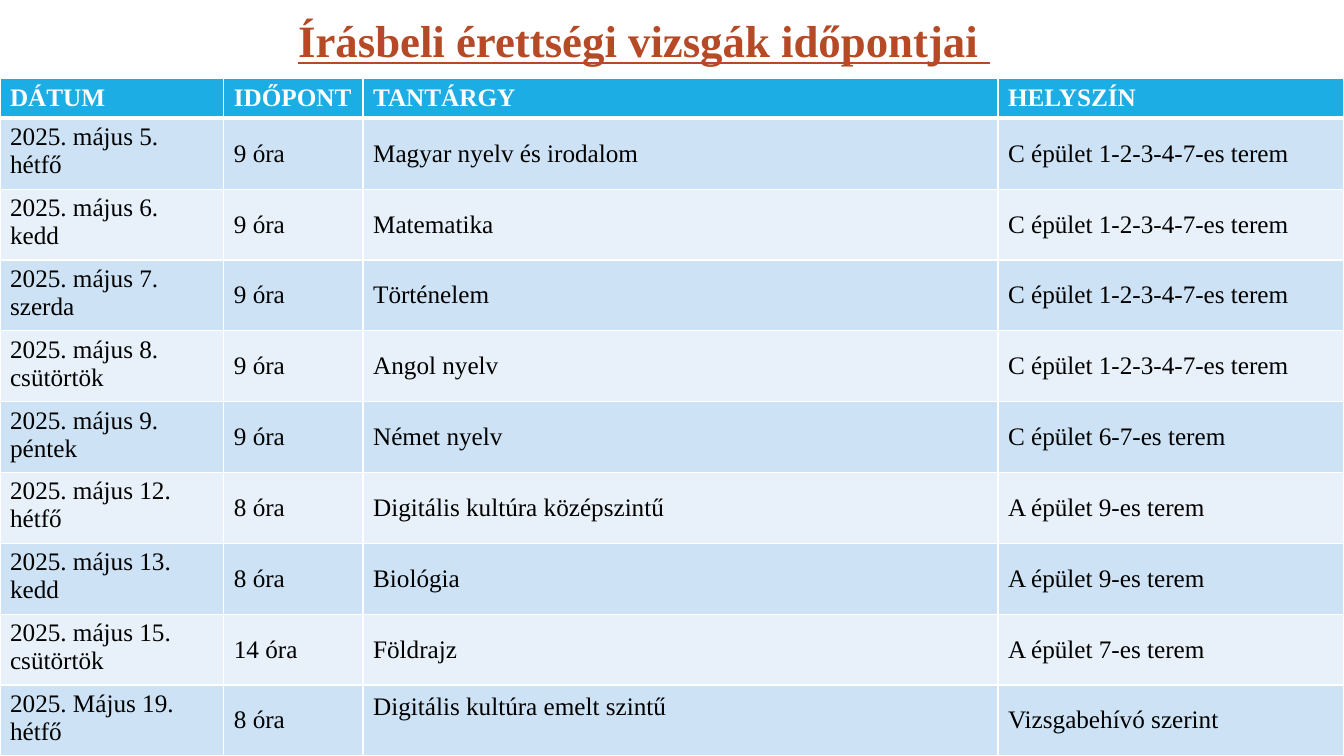
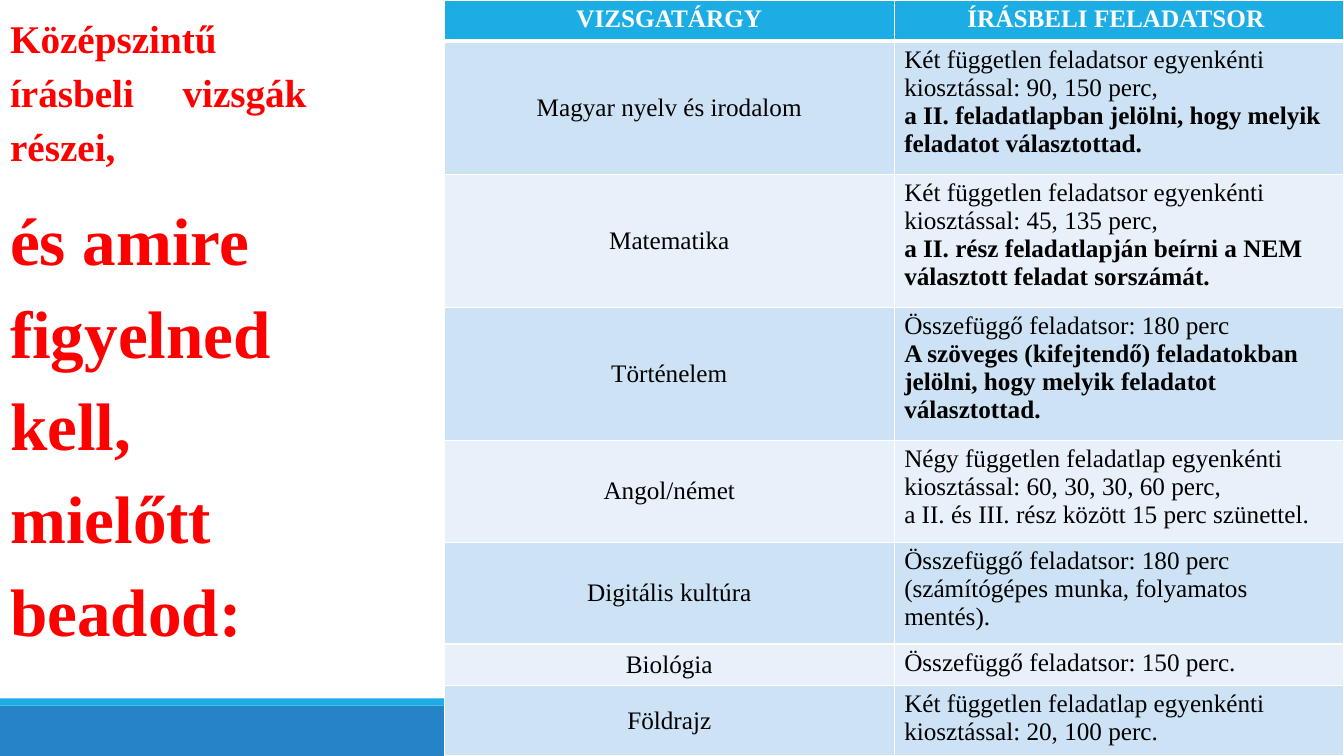
from lxml.etree import SubElement
from pptx import Presentation
from pptx.dml.color import RGBColor
from pptx.enum.shapes import MSO_SHAPE
from pptx.enum.text import MSO_ANCHOR, MSO_AUTO_SIZE, PP_ALIGN
from pptx.oxml.ns import qn
from pptx.util import Cm, Pt

COLORS = {
    "band": "2683C6", "accent": "1CADE4", "white": "FFFFFF", "black": "000000",
    "row_dark": "CDE3F5", "row_light": "E8F1FA", "rust": "B64926", "red": "FF0000",
}
FONT = "Times New Roman"
SLIDE_W, SLIDE_H = 33.87, 19.05

DATES_TITLE = "Írásbeli érettségi vizsgák időpontjai "
DATES_HEADER = ("DÁTUM", "IDŐPONT", "TANTÁRGY", "HELYSZÍN")
MAIN_ROOMS = "C épület 1-2-3-4-7-es terem"
EXAM_DATES = [
    ("2025. május 5.\nhétfő", "9 óra", "Magyar nyelv és irodalom", MAIN_ROOMS),
    ("2025. május 6.\nkedd", "9 óra", "Matematika", MAIN_ROOMS),
    ("2025. május 7.\nszerda", "9 óra", "Történelem", MAIN_ROOMS),
    ("2025. május 8.\ncsütörtök", "9 óra", "Angol nyelv", MAIN_ROOMS),
    ("2025. május 9.\npéntek", "9 óra", "Német nyelv", "C épület 6-7-es terem"),
    ("2025. május 12.\nhétfő", "8 óra", "Digitális kultúra középszintű", "A épület 9-es terem"),
    ("2025. május 13.\nkedd", "8 óra", "Biológia", "A épület 9-es terem"),
    ("2025. május 15.\ncsütörtök", "14 óra", "Földrajz", "A épület 7-es terem"),
    ("2025. Május 19.\nhétfő", "8 óra", "Digitális kultúra emelt szintű", "Vizsgabehívó szerint"),
]
DATES_WIDTHS = (5.64, 3.51, 16, 8.72)
DATES_TOP, DATES_HEADER_H = 1.98, 1

PARTS_TITLE = ("Középszintű írásbeli vizsgák részei,",
               "és amire figyelned kell, mielőtt beadod:")
PARTS_HEADER = ("VIZSGATÁRGY", "ÍRÁSBELI FELADATSOR ")
EXAM_PARTS = [
    ("Magyar nyelv és irodalom",
     "Két független feladatsor egyenkénti kiosztással: 90, 150 perc,\n"
     "a II. feladatlapban jelölni, hogy melyik feladatot választottad."),
    ("Matematika",
     "Két független feladatsor egyenkénti kiosztással: 45, 135 perc,\n"
     "a II. rész feladatlapján beírni a NEM választott feladat sorszámát."),
    ("Történelem",
     "Összefüggő feladatsor: 180 perc\n"
     "A szöveges (kifejtendő) feladatokban jelölni, hogy melyik feladatot választottad."),
    ("Angol/német",
     "Négy független feladatlap egyenkénti kiosztással: 60, 30, 30, 60 perc,\n"
     "a II. és III. rész között 15 perc szünettel."),
    ("Digitális kultúra",
     "Összefüggő feladatsor: 180 perc (számítógépes munka, folyamatos mentés)."),
    ("Biológia", "Összefüggő feladatsor: 150 perc."),
    ("Földrajz", "Két független feladatlap egyenkénti kiosztással: 20, 100 perc."),
]
WARNED_SUBJECTS = 3
PARTS_LEFT = 11.2
PARTS_HEIGHTS = (1.04, 3.35, 3.35, 3.35, 2.57, 2.57, 1.04, 1.78)


def color(name):
    return RGBColor.from_string(COLORS[name])


def style_runs(paragraph, size, ink, bold=False, underline=None):
    for run in paragraph.runs:
        font = run.font
        font.name, font.size, font.bold, font.underline = FONT, Pt(size), bold, underline
        font.color.rgb = color(ink)


def add_bands(slide):
    """Put the two bottom bands on the slide's layout, behind its placeholders."""
    for index, (top, height, fill) in enumerate([(17.78, 1.27, "band"), (17.6, 0.18, "accent")]):
        band = slide.shapes.add_shape(MSO_SHAPE.RECTANGLE, 0, Cm(top), Cm(SLIDE_W), Cm(height))
        band.shadow.inherit = False
        band.fill.solid()
        band.fill.fore_color.rgb = color(fill)
        band.line.fill.background()
        slide.slide_layout.shapes.element.insert(2 + index, band.element)


def set_title(slide, box, paragraphs, ink, space_after, underline=None):
    """Place the title; paragraphs are (text, size, alignment)."""
    title = slide.shapes.title
    title.left, title.top, title.width, title.height = map(Cm, box)
    frame = title.text_frame
    frame.word_wrap = True
    frame.auto_size = MSO_AUTO_SIZE.NONE
    frame.vertical_anchor = MSO_ANCHOR.TOP
    frame.text = "\n".join(text for text, _, _ in paragraphs)
    for paragraph, (_, size, alignment) in zip(frame.paragraphs, paragraphs):
        paragraph.alignment = alignment
        paragraph.line_spacing = 1.15
        paragraph.space_after = Pt(space_after)
        style_runs(paragraph, size, ink, True, underline)


def set_borders(cell, row):
    widths = {"lnL": 1, "lnR": 1, "lnT": 3 if row == 1 else 1, "lnB": 3 if row == 0 else 1}
    properties = cell._tc.get_or_add_tcPr()
    for side, width in widths.items():
        line = SubElement(properties, qn("a:" + side), w=str(Pt(width)))
        fill = SubElement(line, qn("a:solidFill"))
        SubElement(fill, qn("a:srgbClr"), val=COLORS["white"])


def add_exam_table(slide, left, top, widths, heights, rows):
    table = slide.shapes.add_table(len(rows), len(widths), Cm(left), Cm(top),
                                   Cm(sum(widths)), Cm(sum(heights))).table
    table.horz_banding = False
    for column, width in zip(table.columns, widths):
        column.width = Cm(width)
    for index, (row, height, texts) in enumerate(zip(table.rows, heights, rows)):
        row.height = Cm(height)
        is_header = index == 0
        fill = "accent" if is_header else "row_dark" if index % 2 else "row_light"
        for cell, text in zip(row.cells, texts):
            set_borders(cell, index)
            cell.fill.solid()
            cell.fill.fore_color.rgb = color(fill)
            cell.text_frame.text = text
            for paragraph in cell.text_frame.paragraphs:
                style_runs(paragraph, 18, "white" if is_header else "black", is_header)
    return table


def build_dates(slide):
    set_title(slide, (7.26, 0, 18.4, 1.7), [(DATES_TITLE, 32, PP_ALIGN.LEFT)], "rust", 10, True)
    row_height = (SLIDE_H - DATES_TOP - DATES_HEADER_H) / len(EXAM_DATES)
    heights = [DATES_HEADER_H] + [row_height] * len(EXAM_DATES)
    table = add_exam_table(slide, 0, DATES_TOP, DATES_WIDTHS, heights,
                           [DATES_HEADER] + EXAM_DATES)
    for row in range(1, len(heights)):
        for column in range(1, len(DATES_WIDTHS)):
            table.cell(row, column).vertical_anchor = MSO_ANCHOR.MIDDLE
    advanced_level = table.cell(len(EXAM_DATES), 2)
    advanced_level.vertical_anchor = MSO_ANCHOR.TOP
    advanced_level.margin_top = Cm(0.2)


def build_parts(slide):
    heading, warning = PARTS_TITLE
    set_title(slide, (0, 0.05, 7.98, 16.43),
              [(heading, 28, PP_ALIGN.JUSTIFY), (warning, 48, PP_ALIGN.LEFT)], "red", 12)
    widths = [(SLIDE_W - PARTS_LEFT) / 2] * 2
    table = add_exam_table(slide, PARTS_LEFT, 0, widths, PARTS_HEIGHTS,
                           [PARTS_HEADER] + EXAM_PARTS)
    table.cell(0, 1).text_frame.paragraphs[0].alignment = PP_ALIGN.CENTER
    for row in range(len(PARTS_HEIGHTS)):
        subject = table.cell(row, 0)
        subject.text_frame.paragraphs[0].alignment = PP_ALIGN.CENTER
        if row > 0:
            subject.vertical_anchor = MSO_ANCHOR.MIDDLE
    for row in range(1, WARNED_SUBJECTS + 1):
        style_runs(table.cell(row, 1).text_frame.paragraphs[1], 18, "black", True)


def main():
    deck = Presentation()
    deck.slide_width, deck.slide_height = Cm(SLIDE_W), Cm(SLIDE_H)
    title_only = deck.slide_layouts[5]
    dates, parts = (deck.slides.add_slide(title_only) for _ in range(2))
    add_bands(dates)
    build_dates(dates)
    build_parts(parts)
    deck.save("out.pptx")


if __name__ == "__main__":
    main()
